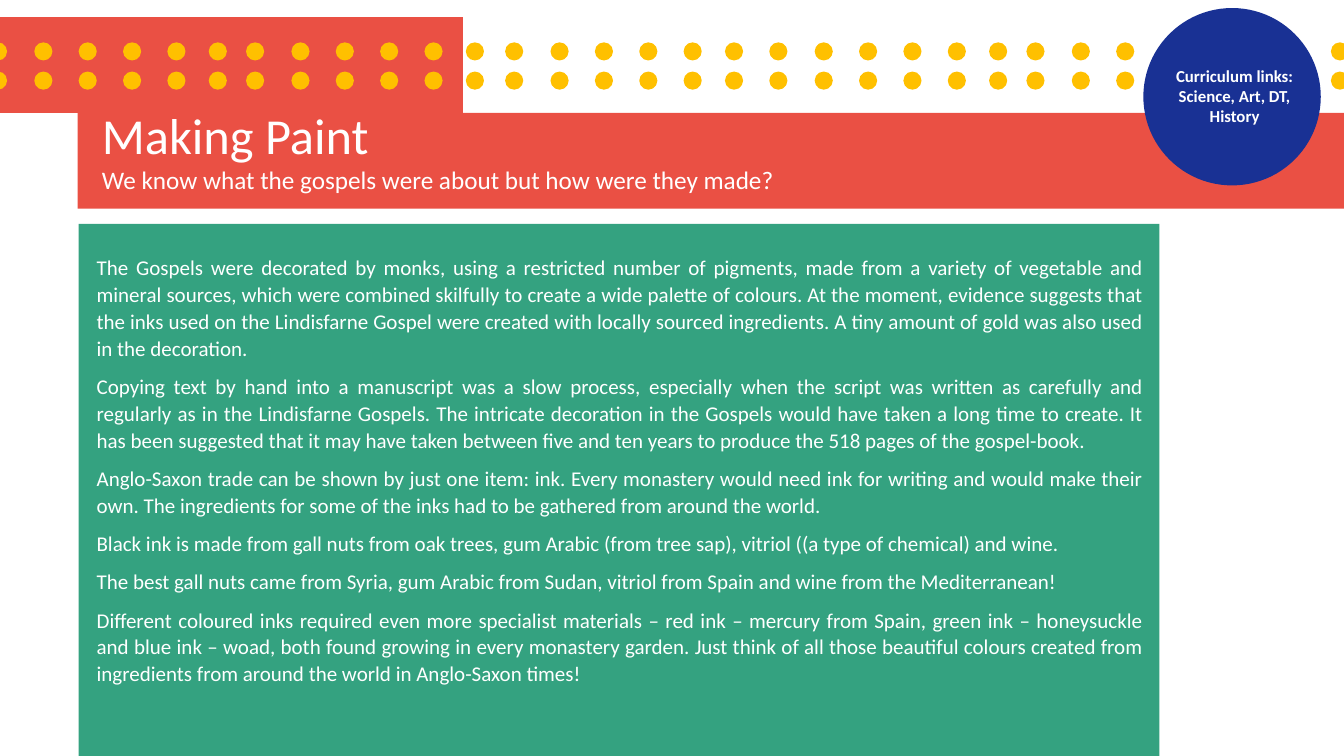
from typing import NamedTuple

from pptx import Presentation
from pptx.dml.color import RGBColor
from pptx.enum.shapes import MSO_SHAPE
from pptx.enum.text import MSO_ANCHOR, MSO_AUTO_SIZE, PP_ALIGN
from pptx.shapes.base import BaseShape
from pptx.slide import Slide
from pptx.text.text import TextFrame
from pptx.util import Inches, Pt

RED, GREEN, BLUE, YELLOW, WHITE = "EA5044", "34A280", "193194", "FFC000", "FFFFFF"
FONT_NAME = "Calibri"

DOT_SIZE = 0.18
DOT_ROWS = (0.42, 0.71)
CLUSTER_STARTS = (-0.11, 2.44, 5.01, 7.63, 10.18, 12.75)
CLUSTER_OFFSETS = (0, 0.45, 0.89, 1.33, 1.77, 2.18)


class Area(NamedTuple):
    left: float
    top: float
    width: float
    height: float


class Paragraph(NamedTuple):
    text: str
    size: float
    bold: bool = False
    alignment: PP_ALIGN = PP_ALIGN.LEFT
    line_spacing: float = 1.0
    space_after: float = 0


class Panel(NamedTuple):
    area: Area
    color: str


SLIDE_AREA = Area(0, 0, 13.33, 7.5)
PANELS = [
    Panel(Area(0.78, 2.22, 10.72, 5.28), GREEN),
    Panel(Area(0.77, 1.12, 12.56, 0.95), RED),
    Panel(Area(0, 0.17, 4.59, 0.95), RED),
]
BADGE_AREA = Area(11.34, 0.08, 1.76, 1.76)
BADGE_TEXT_AREA = Area(11.34, 0.6, 1.81, 0.71)
TITLE_AREA = Area(0.91, 0.98, 8.48, 1.01)
BODY_AREA = Area(0.86, 2.46, 10.58, 4.69)

BADGE_TEXT = Paragraph("Curriculum links: Science, Art, DT, History", 12, True, PP_ALIGN.CENTER)
HEADING = [
    Paragraph("Making Paint", 36),
    Paragraph("We know what the gospels were about but how were they made?", 18),
]
BODY_TEXTS = [
    "The Gospels were decorated by monks, using a restricted number of pigments, made from a "
    "variety of vegetable and mineral sources, which were combined skilfully to create a wide "
    "palette of colours. At the moment, evidence suggests that the inks used on the Lindisfarne "
    "Gospel were created with locally sourced ingredients. A tiny amount of gold was also used "
    "in the decoration.",
    "Copying text by hand into a manuscript was a slow process, especially when the script was "
    "written as carefully and regularly as in the Lindisfarne Gospels. The intricate decoration "
    "in the Gospels would have taken a long time to create. It has been suggested that it may "
    "have taken between five and ten years to produce the 518 pages of the gospel-book.",
    "Anglo-Saxon trade can be shown by just one item: ink. Every monastery would need ink for "
    "writing and would make their own. The ingredients for some of the inks had to be gathered "
    "from around the world.",
    "Black ink is made from gall nuts from oak trees, gum Arabic (from tree sap), vitriol "
    "((a type of chemical) and wine.",
    "The best gall nuts came from Syria, gum Arabic from Sudan, vitriol from Spain and wine "
    "from the Mediterranean!",
    "Different coloured inks required even more specialist materials – red ink – mercury from "
    "Spain, green ink – honeysuckle and blue ink – woad, both found growing in every monastery "
    "garden. Just think of all those beautiful colours created from ingredients from around the "
    "world in Anglo-Saxon times!",
]
BODY = [Paragraph(text, 15, False, PP_ALIGN.JUSTIFY, 1.07, 8) for text in BODY_TEXTS]


def rgb(color: str) -> RGBColor:
    return RGBColor.from_string(color)


def place(shape: BaseShape, area: Area) -> None:
    shape.left, shape.top, shape.width, shape.height = map(Inches, area)


def add_filled_shape(slide: Slide, kind: MSO_SHAPE, area: Area, color: str) -> None:
    shape = slide.shapes.add_shape(kind, *map(Inches, area))
    shape.shadow.inherit = False
    shape.fill.solid()
    shape.fill.fore_color.rgb = rgb(color)
    shape.line.fill.background()


def write(frame: TextFrame, paragraphs: list[Paragraph]) -> None:
    frame.word_wrap = True
    frame.vertical_anchor = MSO_ANCHOR.TOP
    frame.auto_size = MSO_AUTO_SIZE.SHAPE_TO_FIT_TEXT
    for index, content in enumerate(paragraphs):
        para = frame.add_paragraph() if index else frame.paragraphs[0]
        para.text = content.text
        para.alignment = content.alignment
        para.line_spacing = content.line_spacing
        para.space_after = Pt(content.space_after)
        para.font.name = FONT_NAME
        para.font.size = Pt(content.size)
        para.font.bold = content.bold
        para.font.color.rgb = rgb(WHITE)


def add_text(slide: Slide, area: Area, paragraphs: list[Paragraph]) -> None:
    box = slide.shapes.add_textbox(*map(Inches, area))
    write(box.text_frame, paragraphs)


def add_dots(slide: Slide) -> None:
    for top in DOT_ROWS:
        for start in CLUSTER_STARTS:
            for offset in CLUSTER_OFFSETS:
                left = start + offset
                if left < SLIDE_AREA.width:
                    dot_area = Area(left, top, DOT_SIZE, DOT_SIZE)
                    add_filled_shape(slide, MSO_SHAPE.OVAL, dot_area, YELLOW)


def add_heading(slide: Slide) -> None:
    """Fill the title placeholder and bring it in front of the red bands."""
    title = slide.shapes.title
    place(title, TITLE_AREA)
    write(title.text_frame, HEADING)
    slide.shapes.element.append(title.element)


def main() -> None:
    deck = Presentation()
    deck.slide_width = Inches(SLIDE_AREA.width)
    deck.slide_height = Inches(SLIDE_AREA.height)
    page = deck.slides.add_slide(deck.slide_layouts.get_by_name("Title Only"))

    for panel in PANELS:
        add_filled_shape(page, MSO_SHAPE.RECTANGLE, panel.area, panel.color)
    add_dots(page)
    add_filled_shape(page, MSO_SHAPE.OVAL, BADGE_AREA, BLUE)
    add_text(page, BADGE_TEXT_AREA, [BADGE_TEXT])
    add_heading(page)
    add_text(page, BODY_AREA, BODY)
    deck.save("out.pptx")


if __name__ == "__main__":
    main()
